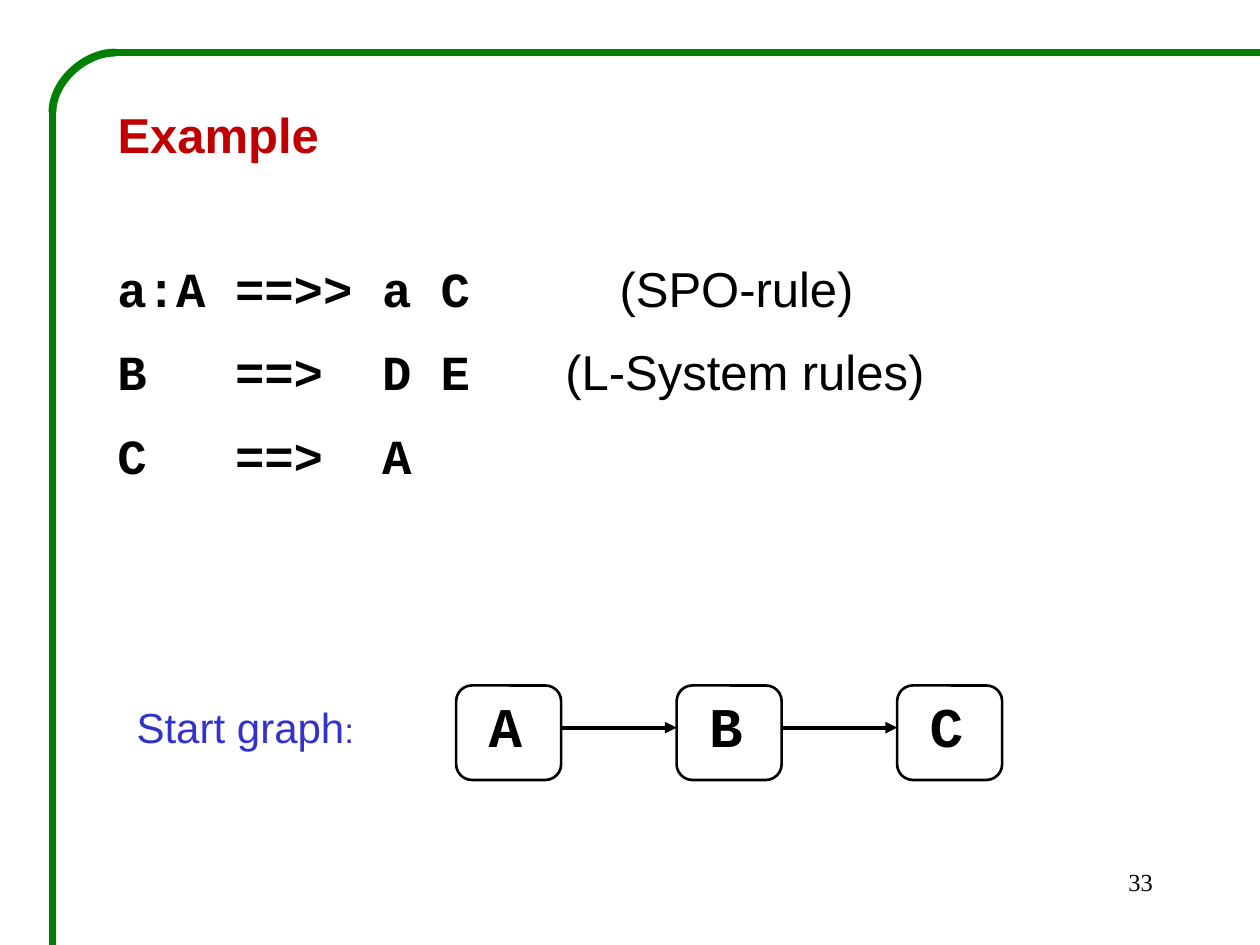
from pptx import Presentation
from pptx.dml.color import RGBColor
from pptx.enum.shapes import MSO_CONNECTOR, MSO_SHAPE
from pptx.enum.text import MSO_ANCHOR, MSO_AUTO_SIZE, PP_ALIGN
from pptx.oxml.ns import qn
from pptx.util import Pt
from lxml.etree import SubElement


def color(target, value):
    target.rgb = RGBColor.from_string(value)


def write(para, text, hue="000000", **form):
    run = para.add_run()
    run.text = text
    for key, value in form.items():
        setattr(run.font, key, value)
    color(run.font.color, hue)


deck = Presentation()
deck.slide_width, deck.slide_height = Pt(720), Pt(540)
slide = deck.slides.add_slide(deck.slide_layouts[5])
shapes = slide.shapes

# Text frames
title = shapes.title
body, label, number = [shapes.add_textbox(0, 0, 0, 0) for _ in range(3)]
places = [
    (title, 60, 56, 624, 42),
    (body, 60, 144, 624, 152),
    (label, 71, 397.6, 166, 36),
    (number, 516, 492, 150, 36),
]
for box, *place in places:
    for key, value in zip(("left", "top", "width", "height"), place):
        setattr(box, key, Pt(value))
    frame = box.text_frame
    form = {
        "word_wrap": True,
        "auto_size": MSO_AUTO_SIZE.NONE,
        "vertical_anchor": MSO_ANCHOR.TOP,
    }
    for key, value in form.items():
        setattr(frame, key, value)

head = title.text_frame.paragraphs[0]
head.alignment = PP_ALIGN.LEFT
write(head, "Example", "C00000", name="Arial", size=Pt(28), bold=True)

start = label.text_frame.paragraphs[0]
write(start, "Start graph", "3333CC", name="Arial", size=Pt(24))
write(start, ":", "3333CC", name="Arial", size=Pt(20))

page = number.text_frame.paragraphs[0]
page.alignment = PP_ALIGN.RIGHT
write(page, "33", name="Times New Roman", size=Pt(14))

# Rules, set in columns by tab stops
rules = [
    ("a:A\t==>>\ta C", "(SPO-rule)", 287),
    ("B\t==>\tD E", "(L-System rules)", 256),
    ("C\t==>\tA", "", 256),
]
frame = body.text_frame
for i, (code, note, stop) in enumerate(rules):
    para = frame.add_paragraph() if i else frame.paragraphs[0]
    para.space_after = Pt(14.3)
    tabs = SubElement(para._p.get_or_add_pPr(), qn("a:tabLst"))
    for pos in (67.2, 151.2, stop):
        SubElement(tabs, qn("a:tab"), pos=str(Pt(pos)), algn="l")
    write(para, code, name="Courier New", size=Pt(28), bold=True)
    if note:
        write(para, "\t" + note, name="Arial", size=Pt(28), bold=False)

# Lines: kind, start, end, colour, width, arrow
left, step, side = 260.64, 126, 60
straight, curve = MSO_CONNECTOR.STRAIGHT, MSO_CONNECTOR.CURVE
lines = [
    (straight, 720, 30, 66, 30, "008000", 4.5, False),
    (straight, 30, 60, 30, 540, "008000", 4.5, False),
    (curve, 31, 29, 65, 65, "008000", 4.5, False),
]
for i in range(2):
    x = left + i * step
    lines.append((straight, x + side, 415.8, x + step, 415.8, "000000", 2.25, True))
for kind, *ends, hue, width, arrow in lines:
    line = shapes.add_connector(kind, *map(Pt, ends))
    line.line.width = Pt(width)
    color(line.line.color, hue)
    props = line._element.spPr
    if arrow:
        SubElement(line.line._get_or_add_ln(), qn("a:tailEnd"), type="triangle")
    if kind == curve:  # quarter turn for the frame corner
        props.find(qn("a:prstGeom")).set("prst", "curvedConnector2")
        props.find(qn("a:xfrm")).set("rot", "16200000")
    SubElement(props, qn("a:effectLst"))

# Graph nodes
for i, name in enumerate("ABC"):
    node = shapes.add_shape(
        MSO_SHAPE.ROUNDED_RECTANGLE,
        Pt(left + i * step), Pt(391.7), Pt(side), Pt(54),
    )
    node.shadow.inherit = False
    node.fill.background()
    node.line.width = Pt(1.5)
    color(node.line.color, "000000")
    node.text_frame.margin_right = Pt(10.6)
    node.text_frame.margin_bottom = Pt(12.6)
    para = node.text_frame.paragraphs[0]
    para.alignment = PP_ALIGN.CENTER
    write(para, name, name="Courier New", size=Pt(32), bold=True)

deck.save("out.pptx")
